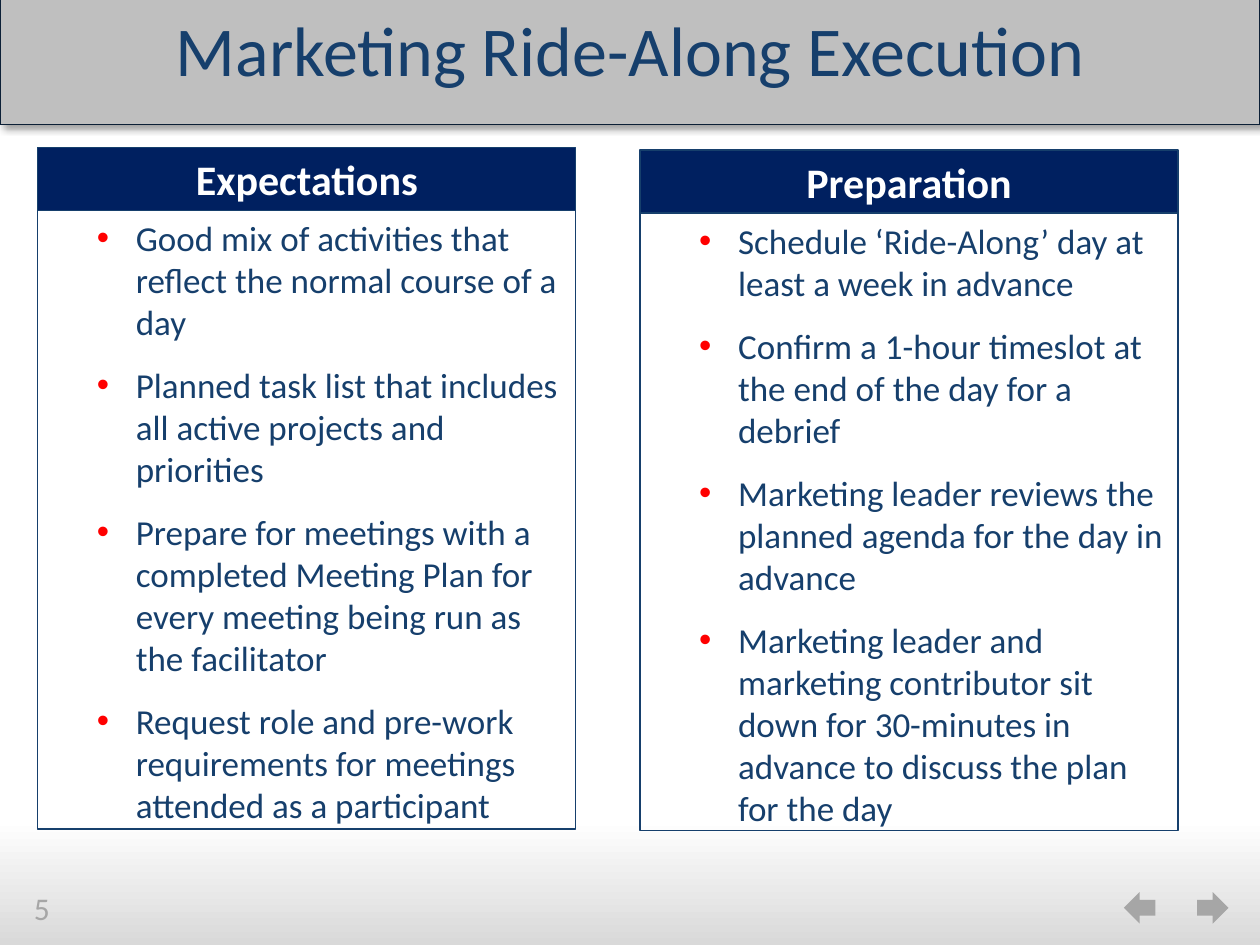
import pptx
import pptx.util
import pptx.dml.color
import pptx.enum.shapes
import pptx.enum.text
import pptx.oxml
from pptx.util import Inches, Pt

COLORS = {
    "navy": "002060", "blue": "163F6C", "edge": "0B1F36", "bar": "BFBFBF",
    "icon": "A6A6A6", "mist": "D9D9D9", "white": "FFFFFF", "bullet": "FF0000",
}
FONT = "Calibri"
SHAPE = pptx.enum.shapes.MSO_SHAPE
ALIGN = pptx.enum.text.PP_ALIGN
ANCHOR = pptx.enum.text.MSO_ANCHOR
NS = 'xmlns:a="http://schemas.openxmlformats.org/drawingml/2006/main"'

PANELS = [
    (0.3, 1.17, 5.41, "Expectations", [
        "Good mix of activities that reflect the normal course of a day",
        "Planned task list that includes all active projects and priorities",
        "Prepare for meetings with a completed Meeting Plan for every meeting "
        "being run as the facilitator",
        "Request role and pre-work requirements for meetings attended as a participant",
    ]),
    (5.08, 1.19, 5.4, "Preparation", [
        "Schedule ‘Ride-Along’ day at least a week in advance",
        "Confirm a 1-hour timeslot at the end of the day for a debrief",
        "Marketing leader reviews the planned agenda for the day in advance",
        "Marketing leader and marketing contributor sit down for 30-minutes in "
        "advance to discuss the plan for the day",
    ]),
]


def rgb(name):
    """Return the named colour."""
    return pptx.dml.color.RGBColor.from_string(COLORS[name])


def add_box(s, kind, x, y, w, h, fill=None, line=None):
    """Add a preset shape without shadow, with optional fill and outline."""
    sp = s.shapes.add_shape(kind, Inches(x), Inches(y), Inches(w), Inches(h))
    sp.shadow.inherit = False
    if fill:
        sp.fill.solid()
        sp.fill.fore_color.rgb = rgb(fill)
    else:
        sp.fill.background()
    if line:
        sp.line.color.rgb = rgb(line)
        sp.line.width = Pt(0.75)
    else:
        sp.line.fill.background()
    return sp


def write(sp, lines, size, color, align=ALIGN.LEFT, anchor=ANCHOR.TOP, bold=False):
    """Fill a shape with one paragraph per line and return the paragraphs."""
    tf = sp.text_frame
    tf.word_wrap = True
    tf.vertical_anchor = anchor
    tf.text = "\n".join(lines)
    for p in tf.paragraphs:
        p.alignment = align
        for r in p.runs:
            r.font.name = FONT
            r.font.size = Pt(size)
            r.font.bold = bold
            r.font.color.rgb = rgb(color)
    return tf.paragraphs


def add_bullet(p):
    """Give a paragraph a hanging red bullet."""
    pPr = p._p.get_or_add_pPr()
    pPr.set("marL", str(Inches(0.68)))
    pPr.set("indent", str(Inches(-0.31)))
    for xml in (
        f'<a:buClr {NS}><a:srgbClr val="{COLORS["bullet"]}"/></a:buClr>',
        f'<a:buFont {NS} typeface="Arial"/>',
        f'<a:buChar {NS} char="•"/>',
    ):
        pPr.append(pptx.oxml.parse_xml(xml))


def add_footer(s, x, y, w, h, number):
    """Add the fading footer band with its page number and arrows."""
    sp = add_box(s, SHAPE.RECTANGLE, x, y, w, h)
    sp.rotation = 180
    sp.fill.gradient()
    sp.fill.gradient_angle = 270
    for stop, name in zip(sp.fill.gradient_stops, ("mist", "white")):
        stop.color.rgb = rgb(name)
    for kind, offset in ((SHAPE.RIGHT_ARROW, 0.5), (SHAPE.LEFT_ARROW, 1.08)):
        add_box(s, kind, x + w - offset, y + 0.58, 0.25, 0.25, fill="icon")
    tb = s.shapes.add_textbox(Inches(x + 0.17), Inches(y + 0.51), Inches(1), Inches(0.4))
    write(tb, [number], 18, "icon")


def add_panel(s, x, y, w, h, heading, items):
    """Add a bulleted panel under a dark heading strip."""
    strip = 0.5
    body = add_box(s, SHAPE.RECTANGLE, x, y + strip, w, h - strip, line="blue")
    for i, p in enumerate(write(body, items, 20, "blue")):
        p.space_before = Pt(6 if i else 0)
        p.space_after = Pt(6)
        add_bullet(p)
    head = add_box(s, SHAPE.RECTANGLE, x, y, w, strip, fill="navy", line="blue")
    write(head, [heading], 24, "white", ALIGN.CENTER, bold=True)


def add_title_bar(s, x, y, w, h, title):
    """Add the title bar with a soft shadow below it."""
    sp = add_box(s, SHAPE.RECTANGLE, x, y, w, h, fill="bar", line="edge")
    p = write(sp, [title], 40, "blue", ALIGN.CENTER, ANCHOR.MIDDLE)[0]
    p.line_spacing = Pt(33)
    effects = sp._element.spPr.find(pptx.oxml.ns.qn("a:effectLst"))
    effects.append(pptx.oxml.parse_xml(
        f'<a:outerShdw {NS} blurRad="{Pt(4)}" dist="{Pt(3)}" dir="{45 * 60000}" '
        'algn="tl" rotWithShape="0"><a:srgbClr val="000000">'
        '<a:alpha val="40000"/></a:srgbClr></a:outerShdw>'))


def main():
    """Build the slide and save it."""
    prs = pptx.Presentation()
    prs.slide_width, prs.slide_height = Inches(10), Inches(7.5)
    s = prs.slides.add_slide(prs.slide_layouts[6])
    add_footer(s, 0, 6.5, 10, 1, "5")
    for x, y, h, heading, items in PANELS:
        add_panel(s, x, y, 4.27, h, heading, items)
    add_title_bar(s, 0, -0.01, 10, 1, "Marketing Ride-Along Execution")
    prs.save("out.pptx")


if __name__ == "__main__":
    main()
